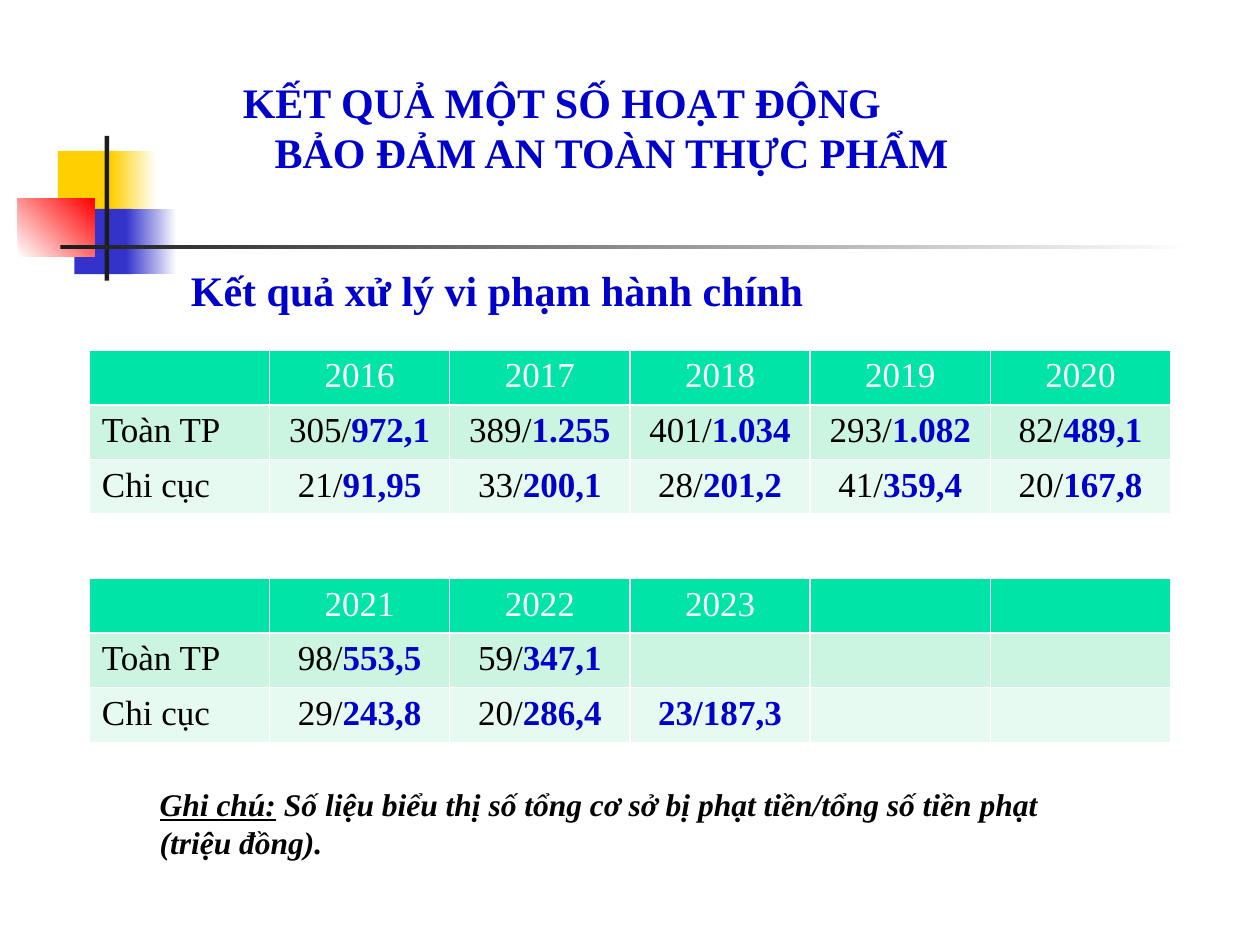
from pptx import Presentation
from pptx.dml.color import RGBColor
from pptx.enum.shapes import MSO_SHAPE
from pptx.enum.text import MSO_ANCHOR, PP_ALIGN
from pptx.util import Cm, Pt

FONT = "Times New Roman"
BLUE = "0000CC"
BLACK = "000000"
WHITE = "FFFFFF"
HEADER_FILL = "00E4A8"
ROW_FILLS = ["CCF5E1", "E7FAF1"]
COLUMN_COUNT = 6

TOP_YEARS = ["2016", "2017", "2018", "2019", "2020"]
TOP_ROWS = [
    ("Toàn TP", [("305/", "972,1"), ("389/", "1.255"), ("401/", "1.034"),
                 ("293/", "1.082"), ("82/", "489,1")]),
    ("Chi cục", [("21/", "91,95"), ("33/", "200,1"), ("28/", "201,2"),
                 ("41/", "359,4"), ("20/", "167,8")]),
]
BOTTOM_YEARS = ["2021", "2022", "2023"]
BOTTOM_ROWS = [
    ("Toàn TP", [("98/", "553,5"), ("59/", "347,1")]),
    ("Chi cục", [("29/", "243,8"), ("20/", "286,4"), ("", "23/187,3")]),
]


def color(value):
    """Return the colour for a hex string."""
    return RGBColor.from_string(value)


def add_text(paragraph, text, size=20, fill=BLACK, bold=False, italic=False,
             underline=False):
    """Append formatted text to a paragraph; a vertical tab breaks the line."""
    for index, line in enumerate(text.split("\v")):
        if index:
            paragraph.add_line_break()
        run = paragraph.add_run()
        run.text = line
        font = run.font
        font.name, font.size = FONT, Pt(size)
        font.bold, font.italic, font.underline = bold, italic, underline
        font.color.rgb = color(fill)


def add_block(slide, left, top, width, height, start, end=None, angle=0):
    """Add a rectangle with a solid fill, or a gradient if an end is given."""
    shape = slide.shapes.add_shape(
        MSO_SHAPE.RECTANGLE, Cm(left), Cm(top), Cm(width), Cm(height))
    shape.shadow.inherit = False
    shape.line.fill.background()
    if end is None:
        shape.fill.solid()
        shape.fill.fore_color.rgb = color(start)
        return
    shape.fill.gradient()
    shape.fill.gradient_angle = angle
    for stop, value in zip(shape.fill.gradient_stops, (start, end)):
        stop.color.rgb = color(value)


def add_emblem(slide, left, top):
    """Draw the coloured squares and the crossing bars from a corner."""
    blocks = [
        (0.81, 0.3, 1.22, 1.32, "FFCF01"),
        (1.88, 0.3, 0.91, 1.32, "FFCF01", WHITE),
        (1.14, 1.47, 1.17, 1.32, "3333CC"),
        (2.18, 1.47, 1.02, 1.32, "3333CC", WHITE),
        (0, 1.27, 1.55, 1.17, WHITE, "FF0000", 45),
        (1.75, 0, 0.09, 2.92, "1C1C1C"),
        (0.86, 2.2, 22.86, 0.09, "1C1C1C", WHITE),
    ]
    for x, y, *rest in blocks:
        add_block(slide, left + x, top + y, *rest)


def add_title(slide, left, top, width, height):
    """Place the two-line title with its first line hanging to the left."""
    title = slide.shapes.title
    title.left, title.top = Cm(left), Cm(top)
    title.width, title.height = Cm(width), Cm(height)
    title.text_frame.word_wrap = True
    title.text_frame.vertical_anchor = MSO_ANCHOR.MIDDLE
    paragraph = title.text_frame.paragraphs[0]
    paragraph.alignment = PP_ALIGN.LEFT
    properties = paragraph._p.get_or_add_pPr()
    properties.set("marL", str(Cm(1.9)))
    properties.set("indent", str(Cm(-0.64)))
    add_text(paragraph, "KẾT QUẢ MỘT SỐ HOẠT ĐỘNG\vBẢO ĐẢM AN TOÀN THỰC PHẨM",
             size=24, fill=BLUE, bold=True)


def add_text_box(slide, left, top, width, height, wrap=True):
    """Add a text box and return its first paragraph."""
    box = slide.shapes.add_textbox(Cm(left), Cm(top), Cm(width), Cm(height))
    box.text_frame.word_wrap = wrap
    return box.text_frame.paragraphs[0]


def add_subtitle(slide, left, top, width, height):
    """Place the heading above the tables."""
    paragraph = add_text_box(slide, left, top, width, height, wrap=False)
    paragraph.alignment = PP_ALIGN.JUSTIFY
    paragraph.space_before = Pt(6)
    add_text(paragraph, "Kết quả xử lý vi phạm hành chính",
             size=24, fill=BLUE, bold=True)


def add_note(slide, left, top, width, height):
    """Place the note below the tables."""
    paragraph = add_text_box(slide, left, top, width, height)
    add_text(paragraph, "Ghi chú:", size=18, bold=True, italic=True,
             underline=True)
    add_text(paragraph, " Số liệu biểu thị số tổng cơ sở bị phạt tiền/tổng số "
             "tiền phạt (triệu đồng).", size=18, bold=True, italic=True)


def add_results_table(slide, left, top, width, height, years, rows):
    """Add a table of fined sites and fines, one column for each year."""
    table = slide.shapes.add_table(
        len(rows) + 1, COLUMN_COUNT,
        Cm(left), Cm(top), Cm(width), Cm(height)).table
    for row, fill in zip(table.rows, [HEADER_FILL] + ROW_FILLS):
        for cell in row.cells:
            cell.fill.solid()
            cell.fill.fore_color.rgb = color(fill)
            paragraph = cell.text_frame.paragraphs[0]
            paragraph.font.size = Pt(20)
            paragraph.alignment = PP_ALIGN.CENTER
    for column, year in enumerate(years, start=1):
        paragraph = table.cell(0, column).text_frame.paragraphs[0]
        add_text(paragraph, year, fill=WHITE)
    for row, (label, values) in enumerate(rows, start=1):
        paragraph = table.cell(row, 0).text_frame.paragraphs[0]
        paragraph.alignment = PP_ALIGN.LEFT
        add_text(paragraph, label)
        for column, (sites, fines) in enumerate(values, start=1):
            paragraph = table.cell(row, column).text_frame.paragraphs[0]
            if sites:
                add_text(paragraph, sites)
            add_text(paragraph, fines, fill=BLUE, bold=True)


def main():
    """Build the slide and save the presentation."""
    presentation = Presentation()
    presentation.slide_width, presentation.slide_height = Cm(25.4), Cm(19.05)
    slide = presentation.slides.add_slide(presentation.slide_layouts[5])
    add_emblem(slide, 0.36, 2.74)
    add_title(slide, 3.38, 1.4, 17.78, 2.31)
    add_subtitle(slide, 3.6, 5.2, 12.98, 1.3)
    add_results_table(slide, 1.8, 7.06, 21.8, 3.3, TOP_YEARS, TOP_ROWS)
    add_results_table(slide, 1.8, 11.66, 21.8, 3.3, BOTTOM_YEARS, BOTTOM_ROWS)
    add_note(slide, 2.97, 15.7, 18.62, 1.8)
    presentation.save("out.pptx")


if __name__ == "__main__":
    main()
